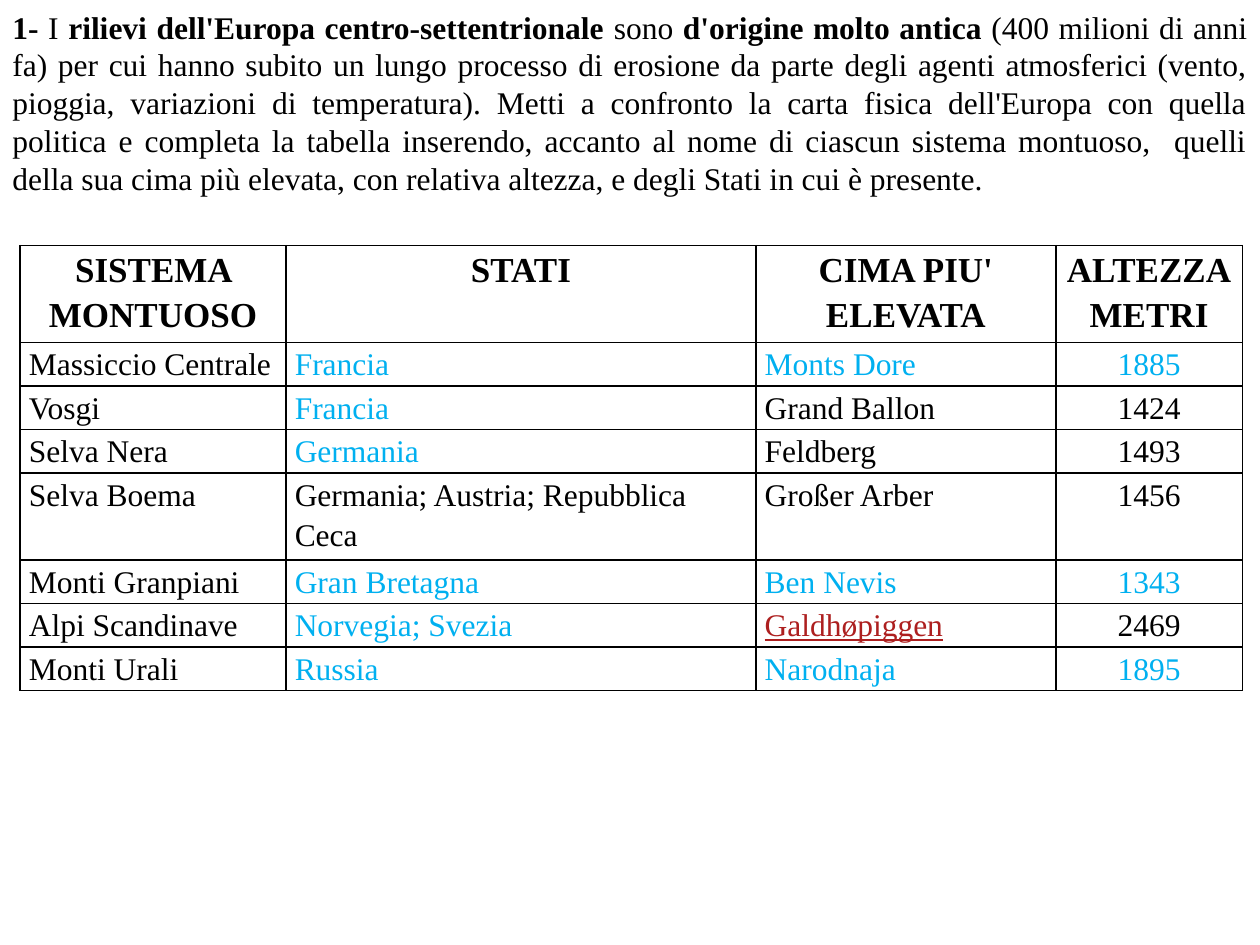
from lxml.etree import SubElement
from pptx import Presentation
from pptx.dml.color import RGBColor
from pptx.enum.text import MSO_ANCHOR, MSO_AUTO_SIZE, PP_ALIGN
from pptx.oxml.ns import qn
from pptx.util import Inches, Pt

FONT = "Times New Roman"
BLACK, BLUE, RED, WHITE = "000000", "00B0F0", "AD1F1F", "FFFFFF"

# Content: the exercise as (text, bold)
EXERCISE = [
    ("1- ", True),
    ("I ", False),
    ("rilievi dell'Europa centro-settentrionale ", True),
    ("sono ", False),
    ("d'origine molto antica", True),
    (" (400 milioni di anni fa) per cui hanno subito un lungo processo di erosione "
     "da parte degli agenti atmosferici (vento, pioggia, variazioni di temperatura). "
     "Metti a confronto la carta fisica dell'Europa con quella politica e completa la "
     "tabella inserendo, accanto al nome di ciascun sistema montuoso,  quelli della sua "
     "cima più elevata, con relativa altezza, e degli Stati in cui è presente. ", False),
]

# Content: one list of paragraphs per heading
HEADINGS = [["SISTEMA MONTUOSO"], ["STATI"], ["CIMA PIU' ELEVATA"], ["ALTEZZA", "METRI"]]

# Content: range, states, peak, height, then the colours of the last three
RANGES = [
    ("Massiccio Centrale", "Francia", "Monts Dore ", "1885", (BLUE, BLUE, BLUE)),
    ("Vosgi", "Francia", "Grand Ballon ", "1424", (BLUE, BLACK, BLACK)),
    ("Selva Nera", "Germania", "Feldberg ", "1493", (BLUE, BLACK, BLACK)),
    ("Selva Boema", "Germania; Austria; Repubblica Ceca", "Großer Arber ", "1456",
     (BLACK, BLACK, BLACK)),
    ("Monti Granpiani", "Gran Bretagna", "Ben Nevis ", "1343", (BLUE, BLUE, BLUE)),
    ("Alpi Scandinave", "Norvegia; Svezia", "Galdhøpiggen", "2469", (BLUE, RED, BLACK)),
    ("Monti Urali", "Russia", "Narodnaja ", "1895", (BLUE, BLUE, BLUE)),
]
COLUMN_WIDTHS = [2.11, 3.73, 2.38, 1.48]
HEADING_HEIGHT, RANGE_HEIGHT, TABLE_HEIGHT = 0.47, 0.25, 3.53


def rgb(color):
    return RGBColor.from_string(color)


def add_run(paragraph, text, size=18, bold=False, color=BLACK, underline=False):
    run = paragraph.add_run()
    run.text = text
    font = run.font
    font.name, font.size, font.bold, font.underline = FONT, Pt(size), bold, underline
    font.color.rgb = rgb(color)


def style_cell(cell):
    cell.margin_left = cell.margin_right = Inches(0.07)
    cell.margin_top = cell.margin_bottom = 0
    properties = cell._tc.get_or_add_tcPr()
    for side in ("a:lnL", "a:lnR", "a:lnT", "a:lnB"):
        border = SubElement(properties, qn(side), w=str(Pt(1)))
        SubElement(SubElement(border, qn("a:solidFill")), qn("a:srgbClr"), val=BLACK)
    cell.fill.solid()
    cell.fill.fore_color.rgb = rgb(WHITE)


def write_cell(cell, lines, align, space_after=10, **style):
    style_cell(cell)
    frame = cell.text_frame
    for index, line in enumerate(lines):
        paragraph = frame.add_paragraph() if index else frame.paragraphs[0]
        paragraph.alignment, paragraph.line_spacing = align, 1.15
        paragraph.space_after = Pt(space_after if index == len(lines) - 1 else 0)
        add_run(paragraph, line, **style)


prs = Presentation()
prs.slide_width, prs.slide_height = Inches(10), Inches(7.5)
slide = prs.slides.add_slide(prs.slide_layouts[6])

# Exercise text
exercise = slide.shapes.add_textbox(0, 0, Inches(10), Inches(1.62)).text_frame
exercise.word_wrap = True
exercise.auto_size = MSO_AUTO_SIZE.SHAPE_TO_FIT_TEXT
exercise.vertical_anchor = MSO_ANCHOR.MIDDLE
exercise.paragraphs[0].alignment = PP_ALIGN.JUSTIFY
for text, bold in EXERCISE:
    add_run(exercise.paragraphs[0], text, bold=bold)

# Table of mountain ranges
mountain_frame = slide.shapes.add_table(
    len(RANGES) + 1, len(HEADINGS), Inches(0.16), Inches(1.95),
    Inches(sum(COLUMN_WIDTHS)), Inches(TABLE_HEIGHT))
mountains = mountain_frame.table
for column, width in zip(mountains.columns, COLUMN_WIDTHS):
    column.width = Inches(width)
for index, row in enumerate(mountains.rows):
    row.height = Inches(RANGE_HEIGHT if index else HEADING_HEIGHT)
mountain_frame.height = Inches(TABLE_HEIGHT)  # rows grow to fill the frame

for column, lines in enumerate(HEADINGS):
    write_cell(mountains.cell(0, column), lines, PP_ALIGN.CENTER, size=20, bold=True)

for row, (*values, answer_colors) in enumerate(RANGES, start=1):
    for column, (value, color) in enumerate(zip(values, (BLACK, *answer_colors))):
        cell = mountains.cell(row, column)
        if column == 3:
            align = PP_ALIGN.CENTER
        elif value.startswith("Germania;"):
            align = PP_ALIGN.LEFT
        else:
            align = PP_ALIGN.JUSTIFY
        write_cell(cell, [value], align, 0 if (row, column) == (1, 0) else 10,
                   color=color, underline=color == RED)
        if color == RED:
            add_run(cell.text_frame.paragraphs[0], " ")

prs.save("out.pptx")
